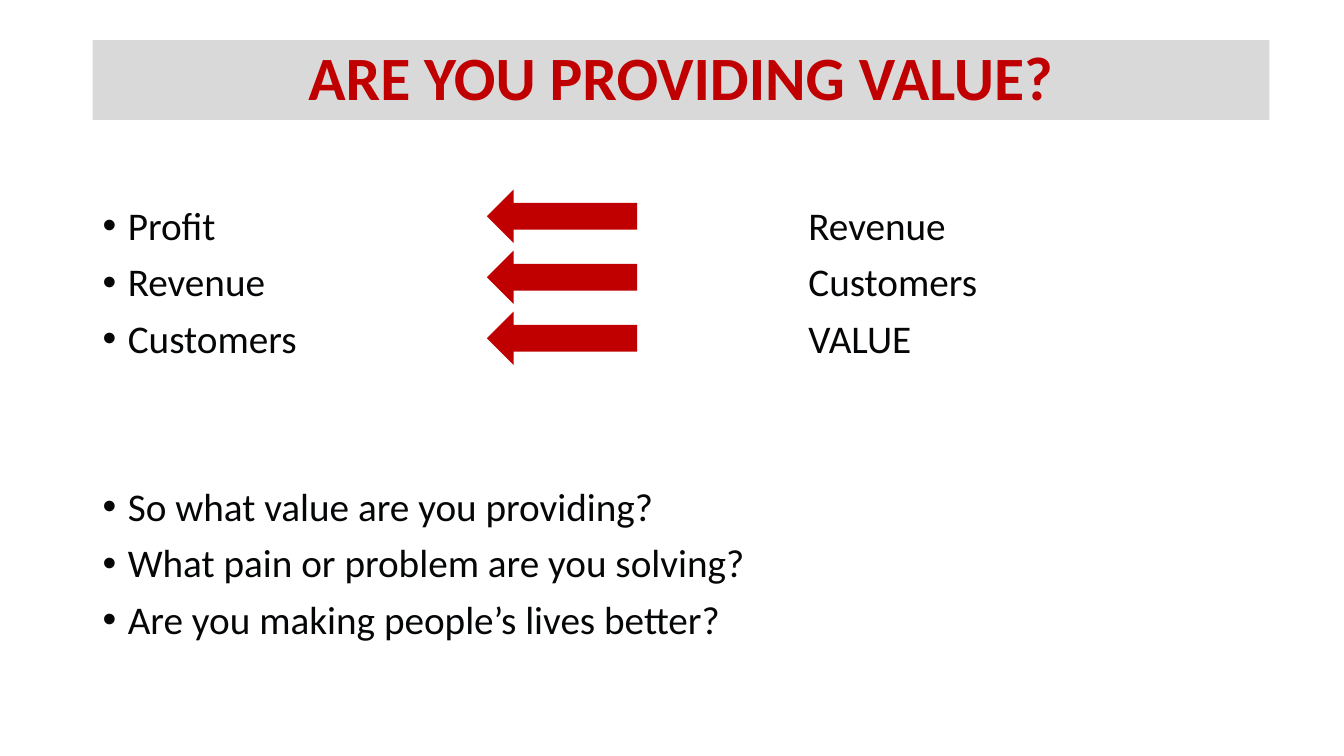
from dataclasses import dataclass

from lxml import etree
from pptx import Presentation
from pptx import util as u
from pptx.dml.color import RGBColor
from pptx.enum import shapes, text
from pptx.oxml.ns import qn


@dataclass(frozen=True)
class Theme:
    font: str = "Calibri"
    red: str = "C00000"
    gray: str = "D9D9D9"
    ink: str = "050607"
    head: int = 44
    body: int = 28


THEME = Theme()
WIDE, HIGH = u.Inches(13.33), u.Inches(7.5)
LEFT = 6.9
PAIRS = [("Profit", "Revenue"), ("Revenue", "Customers"), ("Customers", "VALUE")]
ASKS = [
    "So what value are you providing?",
    "What pain or problem are you solving?",
    "Are you making people’s lives better?",
]


def place(left, top, width, height):
    return [int(size * part / 100) for size, part in
            zip((WIDE, HIGH, WIDE, HIGH), (left, top, width, height))]


def bullet(para, tab):
    props = para._p.get_or_add_pPr()
    props.set("marL", str(u.Inches(0.25)))
    props.set("indent", str(-u.Inches(0.25)))
    etree.SubElement(props, qn("a:buFont"), typeface="Arial")
    etree.SubElement(props, qn("a:buChar"), char="•")
    stops = etree.SubElement(props, qn("a:tabLst"))
    etree.SubElement(stops, qn("a:tab"), pos=str(u.Inches(tab)), algn="l")


def write(para, words, size, color, bold=False, align=text.PP_ALIGN.LEFT,
          before=0, tab=None):
    if tab:
        bullet(para, tab)
    para.alignment = align
    para.line_spacing = 0.9
    para.space_before = u.Pt(before)
    run = para.add_run()
    run.text = words
    font = run.font
    font.name, font.size, font.bold = THEME.font, u.Pt(size), bold
    font.color.rgb = RGBColor.from_string(color)


def block(slide, kind, area, color):
    shape = slide.shapes.add_shape(kind, *place(*area))
    shape.shadow.inherit = False
    shape.fill.solid()
    shape.fill.fore_color.rgb = RGBColor.from_string(color)
    shape.line.fill.background()
    return shape


def title(slide, words):
    bar = block(slide, shapes.MSO_SHAPE.RECTANGLE, (LEFT, 5.33, 87.55, 10.53), THEME.gray)
    frame = bar.text_frame
    frame.word_wrap = True
    frame.vertical_anchor = text.MSO_ANCHOR.MIDDLE
    write(frame.paragraphs[0], words, THEME.head, THEME.red, bold=True,
          align=text.PP_ALIGN.CENTER)


def points(slide):
    frame = slide.shapes.add_textbox(*place(LEFT, 26.67, 86.27, 63.47)).text_frame
    frame.word_wrap = True
    rows = ["\t".join(pair) for pair in PAIRS] + ASKS
    gaps = {0: 0, len(PAIRS): 90}
    for row, words in enumerate(rows):
        para = frame.add_paragraph() if row else frame.paragraphs[0]
        write(para, words, THEME.body, THEME.ink, before=gaps.get(row, 10), tab=7)


def arrows(slide):
    for row in range(len(PAIRS)):
        area = (36.23, 25.07 + 8.07 * row, 11.18, 7.07)
        block(slide, shapes.MSO_SHAPE.LEFT_ARROW, area, THEME.red)


def main():
    deck = Presentation()
    deck.slide_width, deck.slide_height = WIDE, HIGH
    slide = deck.slides.add_slide(deck.slide_layouts[6])
    points(slide)
    arrows(slide)
    title(slide, "ARE YOU PROVIDING VALUE?")
    deck.save("out.pptx")


if __name__ == "__main__":
    main()
